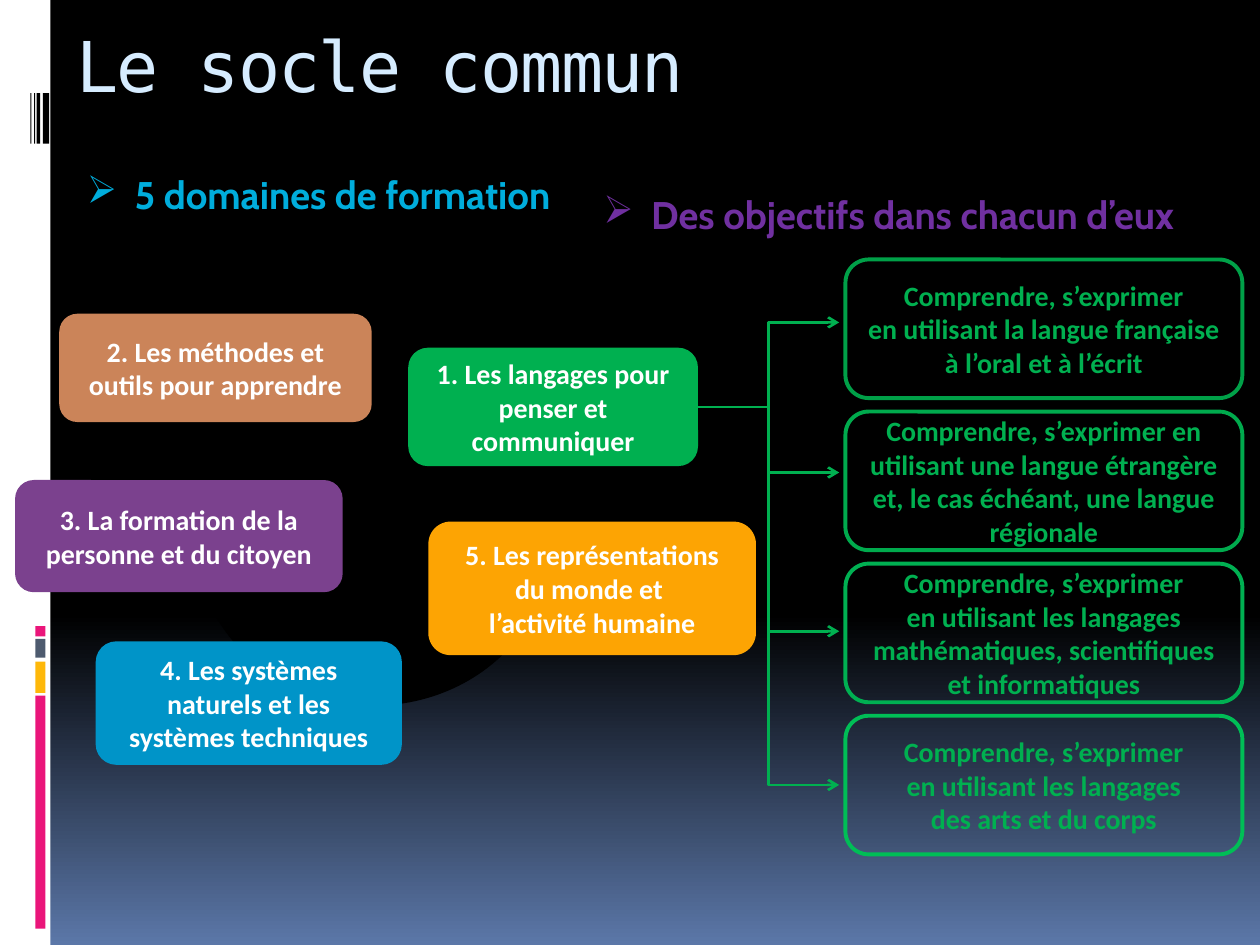
"""Build the "Le socle commun" slide: five domains and the objectives of the first."""
from copy import deepcopy
from dataclasses import dataclass

from pptx import Presentation
from pptx.dml.color import RGBColor
from pptx.enum.shapes import MSO_CONNECTOR, MSO_SHAPE
from pptx.enum.text import MSO_ANCHOR, PP_ALIGN
from pptx.oxml.ns import qn
from pptx.oxml.xmlchemy import OxmlElement
from pptx.util import Inches, Pt


@dataclass(frozen=True)
class Theme:
    """Colours, fonts and type sizes."""
    black: str = "000000"
    white: str = "FFFFFF"
    glow: str = "5B77A8"
    pink: str = "EA157A"
    yellow: str = "FEB80A"
    slate: str = "4E5B6F"
    title: str = "D6ECFF"
    cyan: str = "00ADDC"
    purple: str = "7030A0"
    green: str = "00B050"
    blue: str = "0094C8"
    violet: str = "7B418E"
    brown: str = "CB8459"
    orange: str = "FDA403"
    title_font: str = "DejaVu Sans Mono"
    head_font: str = "Cabin"
    body_font: str = "Calibri"
    title_size: int = 40
    head_size: int = 22
    body_size: int = 16


@dataclass(frozen=True)
class Box:
    """A place on the grid, in columns and rows."""
    col: float
    row: float
    cols: float
    rows: float


@dataclass(frozen=True)
class Domain:
    """A filled box naming one domain."""
    text: str
    box: Box
    color: str


@dataclass(frozen=True)
class Objective:
    """An outlined box with the row its arrow points to."""
    text: str
    line: str
    arrow_row: float


T = Theme()
COLS, ROWS = 100, 75
prs = Presentation()
prs.slide_width, prs.slide_height = Inches(10), Inches(7.5)


def x(col: float) -> int:
    """Turn columns into a length."""
    return round(prs.slide_width * col / COLS)


def y(row: float) -> int:
    """Turn rows into a length."""
    return round(prs.slide_height * row / ROWS)


def place(box: Box) -> tuple:
    """Give left, top, width and height of a box."""
    return x(box.col), y(box.row), x(box.cols), y(box.rows)


def write(tf, text: str, *, size: int, font: str, color: str, bold=True,
          align=PP_ALIGN.LEFT, anchor=MSO_ANCHOR.TOP, bullet="", spacing=0) -> None:
    """Write one formatted paragraph, with line breaks where text has them."""
    tf.word_wrap, tf.vertical_anchor = True, anchor
    p = tf.paragraphs[0]
    p.text, p.alignment = text, align
    for r in p.runs:
        r.font.size, r.font.name, r.font.bold = Pt(size), font, bold
        r.font.color.rgb = RGBColor.from_string(color)
        if spacing:
            r._r.get_or_add_rPr().set("spc", str(spacing * 100))
    for br in p._p.findall(qn("a:br")):
        br.append(deepcopy(p.runs[0]._r.rPr))
    if bullet:
        pPr = p._p.get_or_add_pPr()
        pPr.set("marL", str(Inches(0.38)))
        pPr.set("indent", str(-Inches(0.38)))
        bu = OxmlElement("a:buChar")
        bu.set("char", bullet)
        pPr.append(bu)


def add_text(s, box: Box, text: str, **fmt) -> None:
    """Add a text box."""
    write(s.shapes.add_textbox(*place(box)).text_frame, text, **fmt)


def add_shape(s, kind, box: Box, fill="", line=""):
    """Add a preset shape with a plain fill or a plain outline."""
    sp = s.shapes.add_shape(kind, *place(box))
    sp.shadow.inherit = False
    if fill:
        sp.fill.solid()
        sp.fill.fore_color.rgb = RGBColor.from_string(fill)
    else:
        sp.fill.background()
    if line:
        sp.line.color.rgb = RGBColor.from_string(line)
        sp.line.width = Pt(2.25)
    else:
        sp.line.fill.background()
    return sp


def add_card(s, box: Box, text: str, color: str, fill="", line="") -> None:
    """Add a rounded box with centred text."""
    sp = add_shape(s, MSO_SHAPE.ROUNDED_RECTANGLE, box, fill, line)
    write(sp.text_frame, text, size=T.body_size, font=T.body_font, color=color,
          align=PP_ALIGN.CENTER, anchor=MSO_ANCHOR.MIDDLE)


def add_arrow(s, col: float, row: float, end_col: float, end_row: float) -> None:
    """Add an elbow connector with an open arrowhead."""
    c = s.shapes.add_connector(MSO_CONNECTOR.ELBOW, x(col), y(row), x(end_col), y(end_row))
    c.line.color.rgb = RGBColor.from_string(T.green)
    c.line.width = Pt(1.5)
    tail = OxmlElement("a:tailEnd")
    tail.set("type", "arrow")
    c.line._get_or_add_ln().append(tail)
    c._element.spPr.append(OxmlElement("a:effectLst"))


def paint_background(s) -> None:
    """Fade the background from black to blue at the bottom."""
    fill = s.background.fill
    fill.gradient()
    fill.gradient_angle = 270
    gs = fill.gradient_stops[0]._gs
    gs.addnext(deepcopy(gs))
    for stop, (pos, color) in zip(fill.gradient_stops, ((0, T.black), (0.65, T.black), (1, T.glow))):
        stop.position = pos
        stop.color.rgb = RGBColor.from_string(color)


LANGUAGES = Box(32.4, 27.6, 23, 9.4)
DOMAINS = (
    Domain("4. Les systèmes naturels et les systèmes techniques", Box(7.6, 50.9, 24.3, 9.8), T.blue),
    Domain("3. La formation de la personne et du citoyen", Box(1.2, 38.1, 26, 8.9), T.violet),
    Domain("2. Les méthodes et outils pour apprendre", Box(4.7, 24.9, 24.8, 8.6), T.brown),
    Domain("5. Les représentations du monde et \nl’activité humaine", Box(34, 41.4, 26, 10.6), T.orange),
    Domain("1. Les langages pour penser et communiquer", LANGUAGES, T.green),
)
OBJECTIVES = (
    Objective("Comprendre, s’exprimer\nen utilisant la langue française à l’oral et à l’écrit", "00A048", 25.6),
    Objective("Comprendre, s’exprimer en utilisant une langue étrangère et, le cas échéant, "
              "une langue régionale", "00AA4D", 37.5),
    Objective("Comprendre, s’exprimer\nen utilisant les langages mathématiques, scientifiques "
              "et informatiques", "00B052", 50.1),
    Objective("Comprendre, s’exprimer\nen utilisant les langages\ndes arts et du corps", "00BE56", 62.3),
)
STRIPES = ((55.2, 18.5, T.pink), (52.5, 2.5, T.yellow), (50.7, 1.5, T.slate), (49.7, 0.8, T.pink))
BARS = ((3.4, 0.5), (2.9, 0.3), (2.7, 0.1), (2.4, 0.1))


def main() -> None:
    """Draw the slide and save it."""
    s = prs.slides.add_slide(prs.slide_layouts[6])
    paint_background(s)
    add_shape(s, MSO_SHAPE.RECTANGLE, Box(0, 0, 4, ROWS), T.white)
    for row, rows, color in STRIPES:
        add_shape(s, MSO_SHAPE.RECTANGLE, Box(2.8, row, 0.8, rows), color)
    for col, cols in BARS:
        add_shape(s, MSO_SHAPE.RECTANGLE, Box(col, 7.4, cols, 4), T.black)
    add_shape(s, MSO_SHAPE.OVAL, Box(15.5, 29.5, 28.4, 26.5), T.black)
    add_text(s, Box(5.1, 1.3, 89.9, 13.4), "Le socle commun", size=T.title_size,
             font=T.title_font, color=T.title, bold=False, spacing=-1)
    for d in DOMAINS:
        add_card(s, d.box, d.text, T.white, fill=d.color)
    head = dict(size=T.head_size, font=T.head_font, bullet="➢")
    add_text(s, Box(5.9, 13.1, 43.2, 4.7), "5 domaines de formation", color=T.cyan, **head)
    add_text(s, Box(46.9, 14.7, 53, 4.7), "Des objectifs dans chacun d’eux", color=T.purple, **head)
    for i, o in enumerate(OBJECTIVES):
        add_card(s, Box(67.1, 20.6 + 12.07 * i, 31.5, 11), o.text, T.green, line=o.line)
    for o in OBJECTIVES:
        add_arrow(s, LANGUAGES.col + LANGUAGES.cols, LANGUAGES.row + LANGUAGES.rows / 2, 66.6, o.arrow_row)
    prs.save("out.pptx")


if __name__ == "__main__":
    main()
